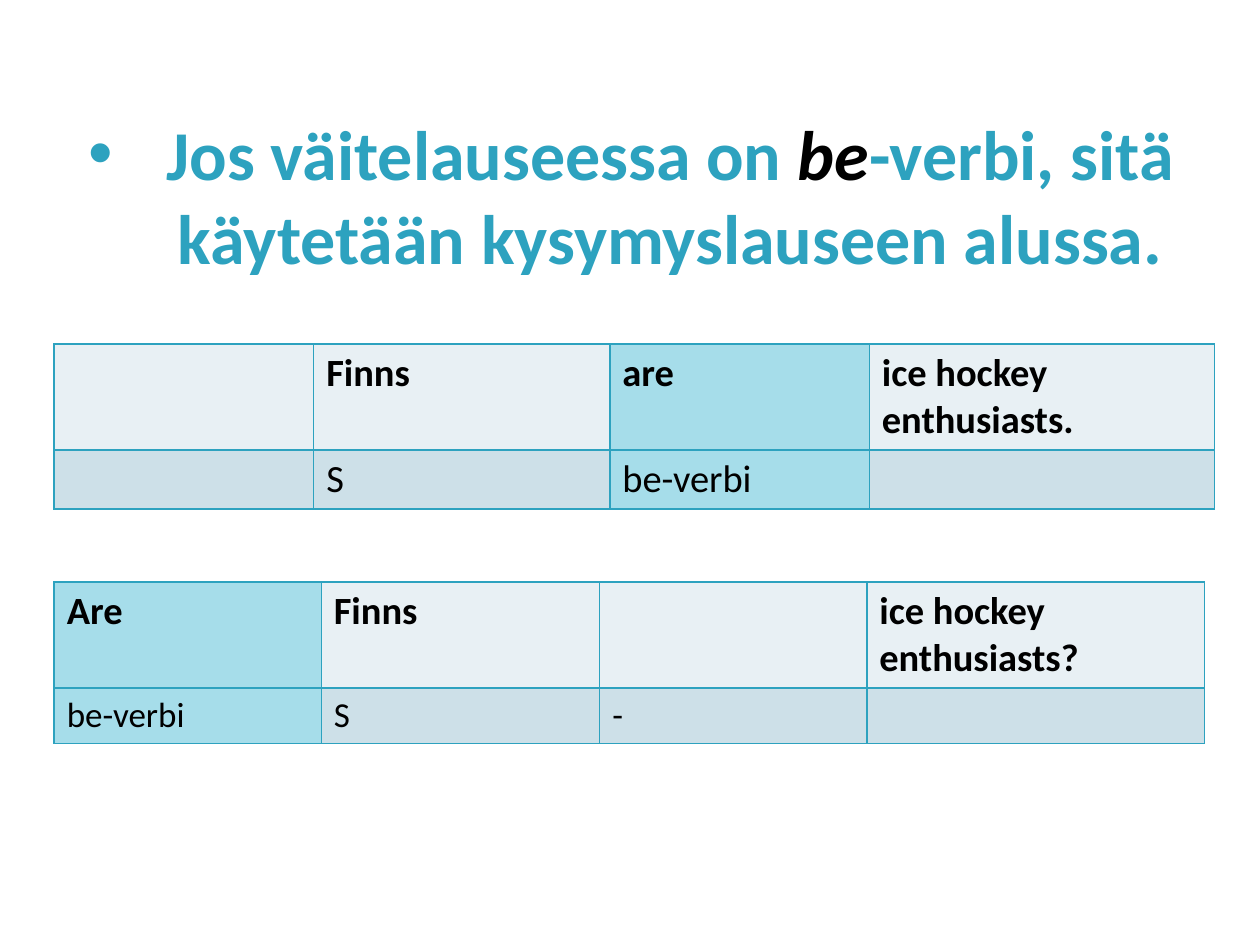
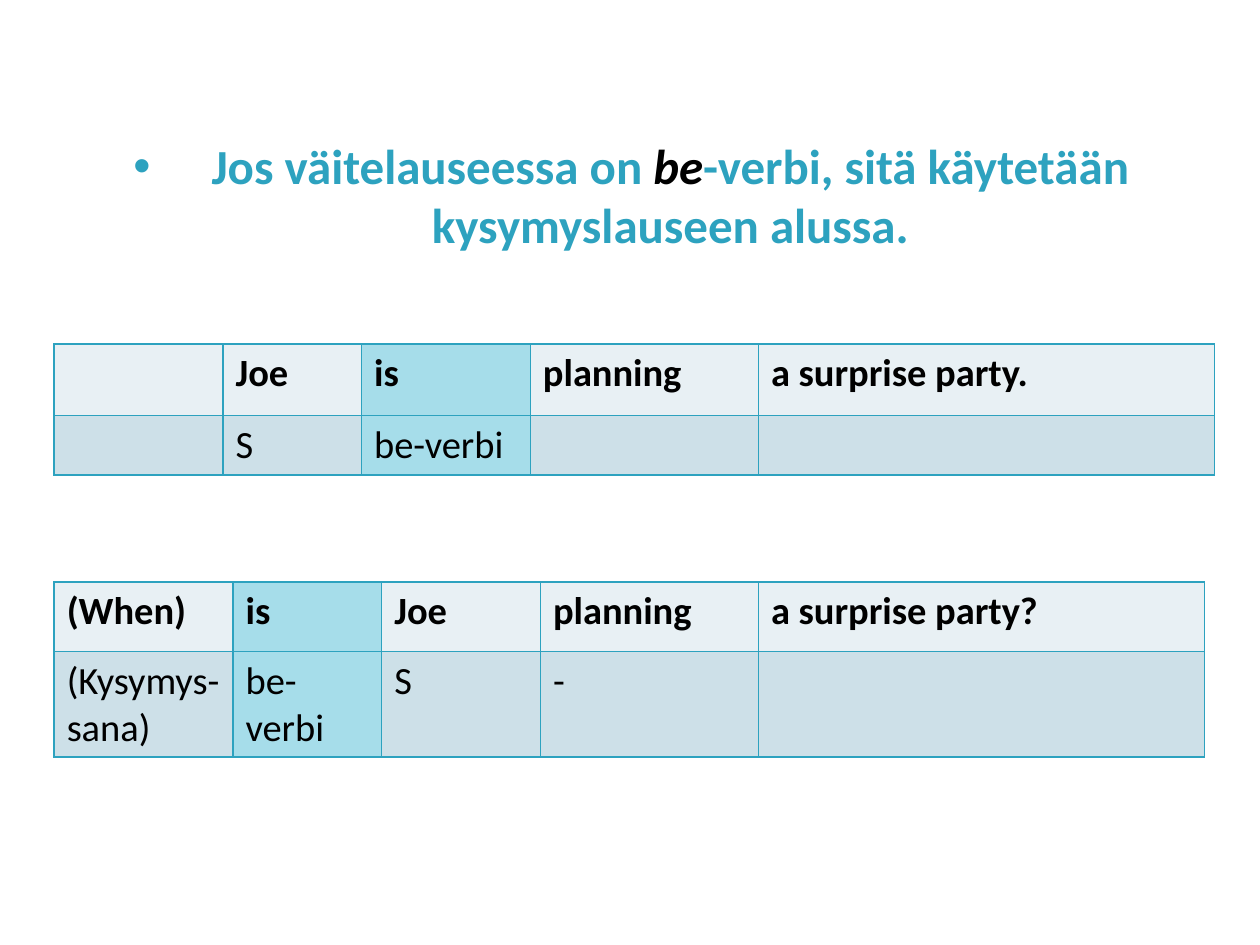
from lxml import etree
from pptx import Presentation
from pptx import util as u
from pptx.dml.color import RGBColor
from pptx.enum import text
from pptx.oxml import ns

TEAL = RGBColor(0x2D, 0xA2, 0xBF)
BLACK = RGBColor(0, 0, 0)
HEAD = RGBColor(0xE8, 0xF0, 0xF4)
BODY = RGBColor(0xCD, 0xE0, 0xE8)
MARK = RGBColor(0xA6, 0xDD, 0xEA)
FACE = "Calibri"
WIDE, HIGH = 10, 7.5
LEFT = 0.43
TOPS = (2.73, 4.62)
INDENT = 0.62

TITLE = [
    ("Jos väitelauseessa on ", {}),
    ("be", {"color": BLACK, "italic": True}),
    ("-verbi, sitä käytetään kysymyslauseen alussa.", {}),
]

SLIDES = [
    {"size": 40, "grids": [
        {"cols": (2.06, 2.35, 2.06, 2.74), "rows": (0.84, 0.47), "mark": 2, "size": 22,
         "cells": [("", "Finns", "are", "ice hockey enthusiasts."),
                   ("", "S", "be-verbi", "")]},
        {"cols": (2.12, 2.21, 2.12, 2.68), "rows": (0.84, 0.44), "mark": 0, "size": 20,
         "cells": [("Are", "Finns", "", "ice hockey enthusiasts?"),
                   ("be-verbi", "S", "-", "")]},
    ]},
    {"size": 28, "grids": [
        {"cols": (1.34, 1.1, 1.34, 1.81, 3.62), "rows": (0.57, 0.47), "mark": 2, "size": 22,
         "cells": [("", "Joe", "is", "planning", "a surprise party."),
                   ("", "S", "be-verbi", "", "")]},
        {"cols": (1.42, 1.18, 1.26, 1.73, 3.54), "rows": (0.55, 0.84), "mark": 1, "size": 22,
         "cells": [("(When)", "is", "Joe", "planning", "a surprise party?"),
                   ("(Kysymys- sana)", "be-verbi", "S", "-", "")]},
    ]},
]


def style(font, form):
    for key, val in form.items():
        if key == "color":
            font.color.rgb = val
        elif key == "size":
            font.size = u.Pt(val)
        else:
            setattr(font, key, val)


def add_title(slide, size):
    box = slide.shapes.add_textbox(
        u.Inches(0.51), u.Inches(0.92), u.Inches(0.9 * WIDE), u.Inches(HIGH / 6))
    frame = box.text_frame
    frame.word_wrap = True
    frame.vertical_anchor = text.MSO_ANCHOR.MIDDLE
    para = frame.paragraphs[0]
    para.alignment = text.PP_ALIGN.CENTER
    props = para._p.get_or_add_pPr()
    props.set("marL", str(u.Inches(INDENT)))
    props.set("indent", str(-u.Inches(INDENT)))
    etree.SubElement(props, ns.qn("a:buFont"), typeface="Arial")
    etree.SubElement(props, ns.qn("a:buChar"), char="•")
    base = {"name": FACE, "size": size, "bold": True, "italic": False, "color": TEAL}
    for words, form in TITLE:
        run = para.add_run()
        run.text = words
        style(run.font, base | form)


def add_lines(cell):
    props = cell._tc.get_or_add_tcPr()
    for side in "LRTB":
        line = etree.SubElement(props, ns.qn("a:ln" + side), w=str(u.Pt(1)))
        fill = etree.SubElement(line, ns.qn("a:solidFill"))
        etree.SubElement(fill, ns.qn("a:srgbClr"), val=str(TEAL))


def add_grid(slide, top, grid):
    cols, rows = grid["cols"], grid["rows"]
    table = slide.shapes.add_table(
        len(rows), len(cols), u.Inches(LEFT), u.Inches(top),
        u.Inches(sum(cols)), u.Inches(sum(rows))).table
    for col, width in zip(table.columns, cols):
        col.width = u.Inches(width)
    for row, height in zip(table.rows, rows):
        row.height = u.Inches(height)
    looks = ((HEAD, 22, True), (BODY, grid["size"], False))
    for r, (line, (tint, size, bold)) in enumerate(zip(grid["cells"], looks)):
        for c, words in enumerate(line):
            cell = table.cell(r, c)
            add_lines(cell)
            cell.fill.solid()
            cell.fill.fore_color.rgb = MARK if c == grid["mark"] else tint
            para = cell.text_frame.paragraphs[0]
            form = {"name": FACE, "size": size, "bold": bold, "color": BLACK}
            if words:
                run = para.add_run()
                run.text = words
                style(run.font, form)


def main():
    deck = Presentation()
    deck.slide_width, deck.slide_height = u.Inches(WIDE), u.Inches(HIGH)
    for page in SLIDES:
        slide = deck.slides.add_slide(deck.slide_layouts[6])
        add_title(slide, page["size"])
        for top, grid in zip(TOPS, page["grids"]):
            add_grid(slide, top, grid)
    deck.save("out.pptx")


if __name__ == "__main__":
    main()
